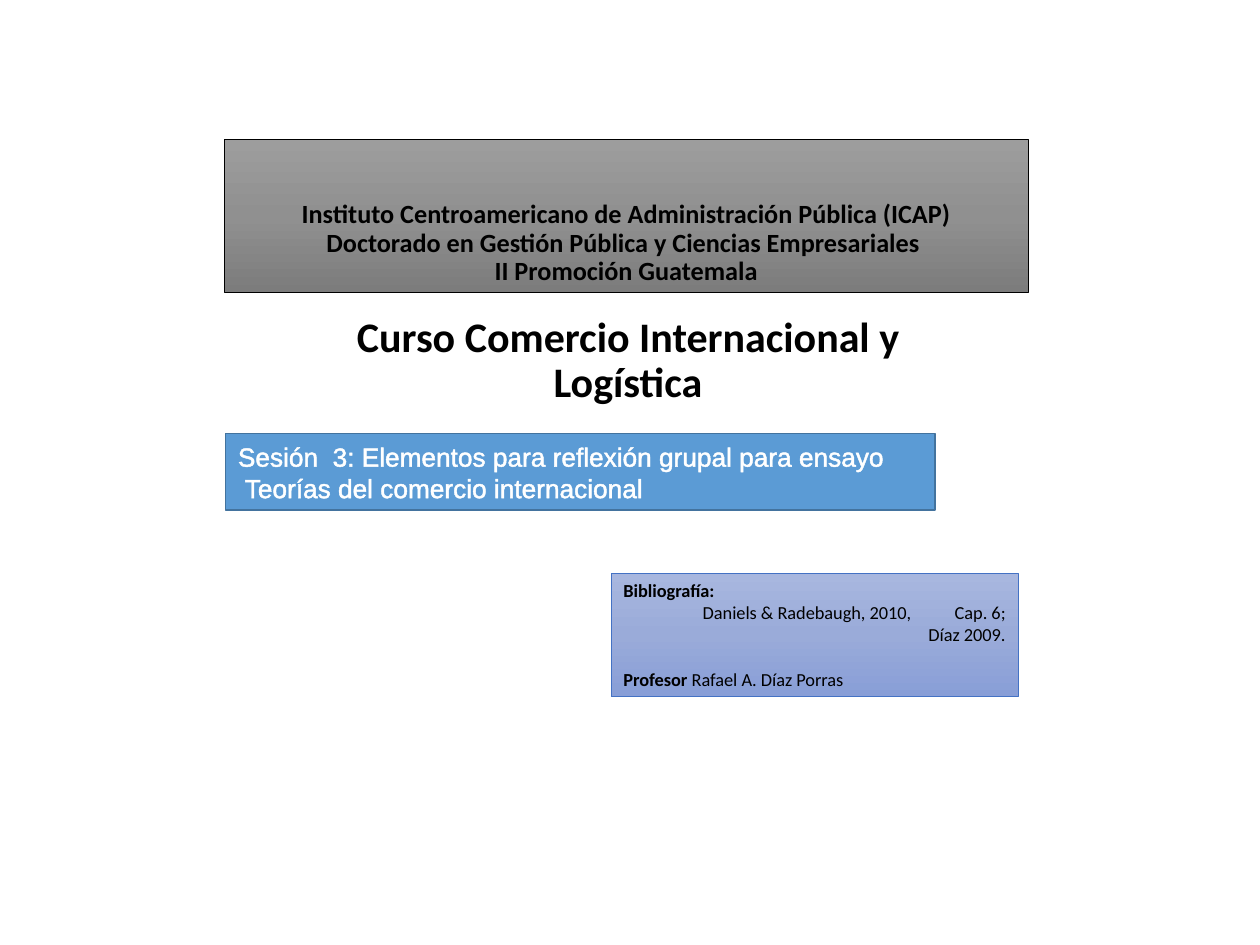
from copy import deepcopy
from dataclasses import dataclass

from lxml import etree
from pptx import Presentation
from pptx.dml.color import RGBColor
from pptx.enum.shapes import MSO_SHAPE
from pptx.enum.text import MSO_ANCHOR, PP_ALIGN
from pptx.oxml.ns import qn
from pptx.util import Inches, Pt

RECTANGLE = MSO_SHAPE.RECTANGLE
LEFT, CENTER, RIGHT = PP_ALIGN.LEFT, PP_ALIGN.CENTER, PP_ALIGN.RIGHT
TOP, MIDDLE, BOTTOM = MSO_ANCHOR.TOP, MSO_ANCHOR.MIDDLE, MSO_ANCHOR.BOTTOM


@dataclass(frozen=True)
class Theme:
    black: str = "000000"
    white: str = "FFFFFF"
    session_fill: str = "5B9BD5"
    session_line: str = "43739E"
    reference_line: str = "4472C4"
    grays: tuple = ("9D9D9D", "909090", "7C7C7C")
    blues: tuple = ("A8B7DF", "9AABD9", "889ED7")
    body_font: str = "Calibri"
    session_font: str = "Arial"
    course_size: float = 24
    heading_size: float = 15
    reference_size: float = 10.5


theme = Theme()


def add_panel(box, colors, line_color, line_width, anchor):
    """Add a rectangle with a solid or a top-to-bottom three-stop fill."""
    shape = slide.shapes.add_shape(RECTANGLE, *map(Inches, box))
    shape.shadow.inherit = False
    if len(colors) == 1:
        shape.fill.solid()
        shape.fill.fore_color.rgb = RGBColor.from_string(colors[0])
    else:
        shape.fill.gradient()
        shape.fill.gradient_angle = 270
        first_stop = shape._element.spPr.find(".//" + qn("a:gs"))
        first_stop.addnext(deepcopy(first_stop))
        for stop, position, color in zip(shape.fill.gradient_stops, (0, 0.5, 1), colors):
            stop.position = position
            stop.color.rgb = RGBColor.from_string(color)
    shape.line.color.rgb = RGBColor.from_string(line_color)
    shape.line.width = Pt(line_width)
    shape.text_frame.word_wrap = True
    shape.text_frame.vertical_anchor = anchor
    return shape.text_frame


def style(paragraph, size, color=theme.black, name=theme.body_font, bold=None, align=LEFT):
    paragraph.alignment = align
    paragraph.font.size = Pt(size)
    paragraph.font.name = name
    paragraph.font.bold = bold
    paragraph.font.color.rgb = RGBColor.from_string(color)


presentation = Presentation()
presentation.slide_width = Inches(10)
presentation.slide_height = Inches(7.5)
slide = presentation.slides.add_slide(presentation.slide_layouts[6])

# Institution heading
heading = add_panel((1.78, 1.11, 6.38, 1.21), theme.grays, theme.black, 0.5, BOTTOM)
paragraph = heading.paragraphs[0]
paragraph.text = (
    "Instituto Centroamericano de Administración Pública (ICAP)\n"
    "Doctorado en Gestión Pública y Ciencias Empresariales \n"
    "II Promoción Guatemala"
)
paragraph.line_spacing = 0.9
style(paragraph, theme.heading_size, bold=True, align=CENTER)

# Course name
course = slide.shapes.add_textbox(Inches(2.36), Inches(2.46), Inches(5.25), Inches(0.82)).text_frame
course.word_wrap = True
paragraph = course.paragraphs[0]
paragraph.text = "Curso Comercio Internacional y Logística"
paragraph.line_spacing = 0.9
style(paragraph, theme.course_size, bold=True, align=CENTER)

# Session title, with outlined letters
session = add_panel((1.79, 3.44, 5.63, 0.61), (theme.session_fill,), theme.session_line, 1, MIDDLE)
session.text = "Sesión  3: Elementos para reflexión grupal para ensayo\n Teorías del comercio internacional"
for paragraph in session.paragraphs:
    style(paragraph, theme.heading_size, theme.white, theme.session_font)
    outline = etree.Element(qn("a:ln"), w=str(Pt(1.45)))
    outline_fill = etree.SubElement(outline, qn("a:solidFill"))
    etree.SubElement(outline_fill, qn("a:srgbClr"), val=theme.white)
    paragraph.runs[0]._r.get_or_add_rPr().insert(0, outline)

# Bibliography and professor: bold label, plain text, alignment, space before
references = add_panel((4.85, 4.55, 3.23, 0.98), theme.blues, theme.reference_line, 0.5, TOP)
entries = (
    ("Bibliografía:", "", LEFT, None),
    ("", "\tDaniels & Radebaugh, 2010, \tCap. 6; Díaz 2009.", RIGHT, None),
    ("Profesor", " Rafael A. Díaz Porras", LEFT, 12.6),
)
for index, (label, detail, align, space) in enumerate(entries):
    paragraph = references.add_paragraph() if index else references.paragraphs[0]
    style(paragraph, theme.reference_size, align=align)
    if space:
        paragraph.space_before = Pt(space)
    for text, bold in ((label, True), (detail, False)):
        if text:
            run = paragraph.add_run()
            run.text = text
            run.font.bold = bold

presentation.save("out.pptx")
